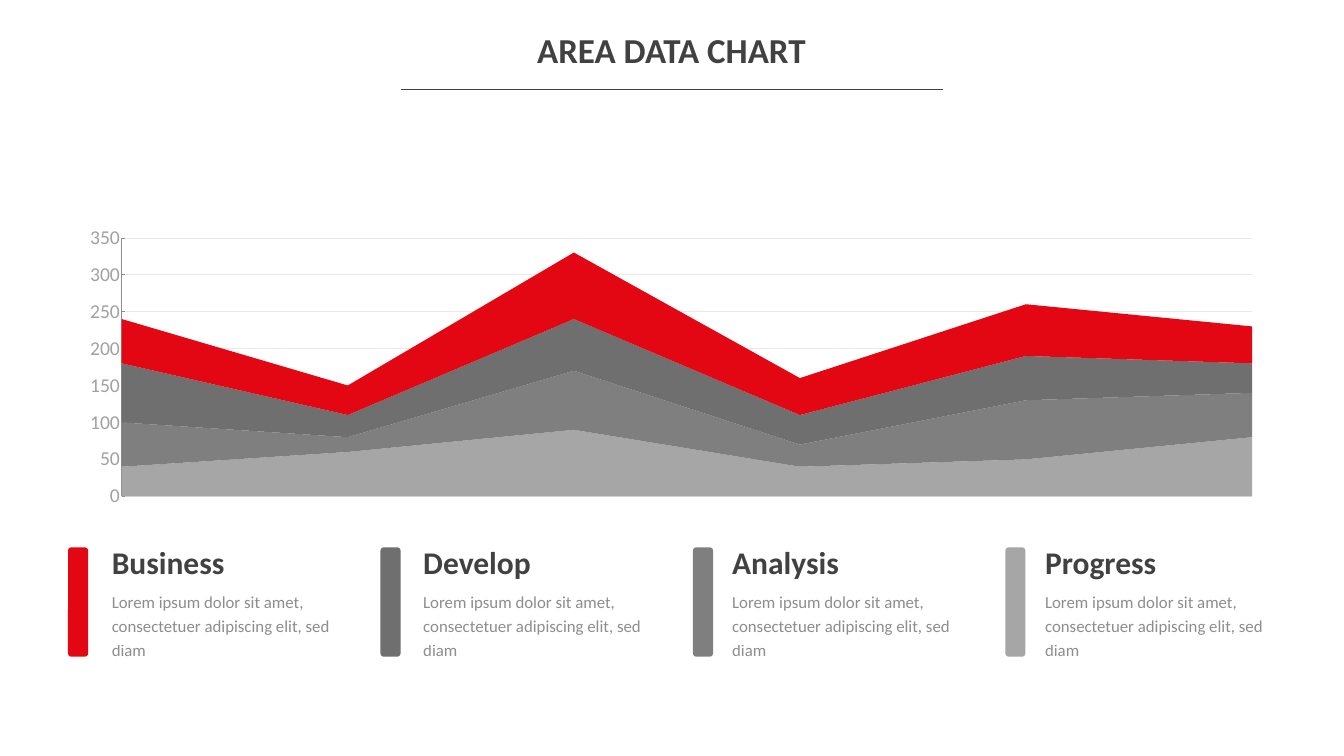
from dataclasses import dataclass

from lxml import etree
from pptx import Presentation
from pptx.chart.data import CategoryChartData
from pptx.dml.color import RGBColor
from pptx.enum.chart import XL_CHART_TYPE, XL_TICK_MARK
from pptx.enum.shapes import MSO_CONNECTOR, MSO_SHAPE
from pptx.enum.text import MSO_ANCHOR, MSO_AUTO_SIZE, PP_ALIGN
from pptx.oxml import parse_xml
from pptx.oxml.ns import nsdecls, qn
from pptx.util import Pt

AREA_STACKED = XL_CHART_TYPE.AREA_STACKED
TICK_INSIDE = XL_TICK_MARK.INSIDE
STRAIGHT = MSO_CONNECTOR.STRAIGHT
ROUNDED = MSO_SHAPE.ROUNDED_RECTANGLE
TOP = MSO_ANCHOR.TOP
GROW = MSO_AUTO_SIZE.SHAPE_TO_FIT_TEXT
CENTER = PP_ALIGN.CENTER
LEFT = PP_ALIGN.LEFT

PX = 9144  # EMU per px, 100 px to the inch
TITLE_ONLY = 5


@dataclass(frozen=True)
class Theme:
    font: str = "Calibri"
    ink: str = "414141"
    red: str = "E30613"
    dark: str = "706F6F"
    middle: str = "7F7F7F"
    light: str = "A6A6A6"
    axis_text: str = "A2A1A1"
    axis_line: str = "8D8D8D"
    grid: str = "EAE9E9"
    title_size: int = 50
    heading_size: int = 45
    axis_size: int = 28
    body_size: int = 24
    chart_size: int = 10
    body_opacity: int = 60


THEME = Theme()

SERIES = [
    ("Series 1", (40, 60, 90, 40, 50, 80), THEME.light),
    ("Series 2", (60, 20, 80, 30, 80, 60), THEME.middle),
    ("Series 3", (80, 30, 70, 40, 60, 40), THEME.dark),
    ("Series 4", (60, 40, 90, 50, 70, 50), THEME.red),
]
BODY = "Lorem ipsum dolor sit amet, consectetuer adipiscing elit, sed diam"
# heading, bar colour, distance from bar to text
LEGEND = [
    ("Business", THEME.red, 77),
    ("Develop", THEME.dark, 75),
    ("Analysis", THEME.middle, 68),
    ("Progress", THEME.light, 69),
]


def emu(*lengths):
    return [length * PX for length in lengths]


def rgb(value):
    return RGBColor.from_string(value)


def style_font(font, size, color, bold=False):
    font.name = THEME.font
    font.size = Pt(size)
    font.bold = bold
    font.color.rgb = rgb(color)


def style_line(line, color, width):
    line.color.rgb = rgb(color)
    line.width = Pt(width)


def write_text(shape, text, size, bold=False, spacing=1.0, align=LEFT):
    frame = shape.text_frame
    frame.text = text
    frame.word_wrap = True
    frame.auto_size = GROW
    frame.vertical_anchor = TOP
    paragraph = frame.paragraphs[0]
    paragraph.alignment = align
    paragraph.line_spacing = spacing
    run = paragraph.runs[0]
    style_font(run.font, size, THEME.ink, bold)
    return run


def set_opacity(run, percent):
    color = run._r.find(".//" + qn("a:srgbClr"))
    etree.SubElement(color, qn("a:alpha"), val=str(percent * 1000))


def add_title(slide, left, top, width, height):
    title = slide.shapes.title
    title.left, title.top, title.width, title.height = emu(left, top, width, height)
    write_text(title, "AREA DATA CHART", THEME.title_size, True, 1.2, CENTER)

    rule_left, rule_top, rule_width = left + 351, top + 143, 1075
    rule = slide.shapes.add_connector(
        STRAIGHT, *emu(rule_left, rule_top, rule_left + rule_width, rule_top))
    style_line(rule.line, THEME.ink, 0.5)
    etree.SubElement(rule._element.spPr, qn("a:effectLst"))


def set_plot_area(chart, x, y, width, height):
    """Fix the inner plot area, in fractions of the chart."""
    plot_area = chart._chartSpace.chart.plotArea
    for old in plot_area.findall(qn("c:layout")):
        plot_area.remove(old)
    plot_area.insert(0, parse_xml(
        f'<c:layout {nsdecls("c")}><c:manualLayout><c:layoutTarget val="inner"/>'
        '<c:xMode val="edge"/><c:yMode val="edge"/>'
        f'<c:x val="{x}"/><c:y val="{y}"/><c:w val="{width}"/><c:h val="{height}"/>'
        "</c:manualLayout></c:layout>"))


def add_area_chart(slide, left, top, width, height):
    data = CategoryChartData()
    data.categories = ["1", "2", "3", "4", "5", "6"]
    for name, values, _ in SERIES:
        data.add_series(name, values)
    chart = slide.shapes.add_chart(
        AREA_STACKED, *emu(left, top, width, height), data).chart
    chart.has_title = False
    chart.has_legend = False
    style_font(chart.font, THEME.chart_size, THEME.dark)
    set_plot_area(chart, 0.046, 0.058, 0.933, 0.88)

    plot = chart.plots[0]
    plot.vary_by_categories = False
    for series, (_, _, color) in zip(plot.series, SERIES):
        series.format.fill.solid()
        series.format.fill.fore_color.rgb = rgb(color)
        series.format.line.fill.background()

    chart.category_axis.visible = False
    axis = chart.value_axis
    axis.minimum_scale, axis.maximum_scale, axis.major_unit = 0, 350, 50
    axis.major_tick_mark = TICK_INSIDE
    style_font(axis.tick_labels.font, THEME.axis_size, THEME.axis_text)
    style_line(axis.format.line, THEME.axis_line, 0.75)
    axis.has_major_gridlines = True
    style_line(axis.major_gridlines.format.line, THEME.grid, 0.75)


def add_legend_item(slide, left, top, heading, color, text_offset):
    bar = slide.shapes.add_shape(ROUNDED, *emu(left, top + 13, 40, 217))
    bar.shadow.inherit = False
    bar.adjustments[0] = 0.17
    bar.fill.solid()
    bar.fill.fore_color.rgb = rgb(color)
    bar.line.fill.background()

    text_left, text_width = left + text_offset, 507
    heading_box = slide.shapes.add_textbox(*emu(text_left, top, text_width, 86))
    write_text(heading_box, heading, THEME.heading_size, bold=True)
    body_box = slide.shapes.add_textbox(*emu(text_left, top + 88, text_width, 152))
    run = write_text(body_box, BODY, THEME.body_size, spacing=1.2)
    set_opacity(run, THEME.body_opacity)


def add_legend(slide, left, top, pitch):
    for index, item in enumerate(LEGEND):
        add_legend_item(slide, left + index * pitch, top, *item)


def main():
    presentation = Presentation()
    presentation.slide_width, presentation.slide_height = emu(2667, 1500)
    slide = presentation.slides.add_slide(presentation.slide_layouts[TITLE_ONLY])
    add_title(slide, 445, 34, 1775, 100)
    add_area_chart(slide, 131, 438, 2404, 583)
    add_legend(slide, 135, 1073, 620)
    presentation.save("out.pptx")


if __name__ == "__main__":
    main()
